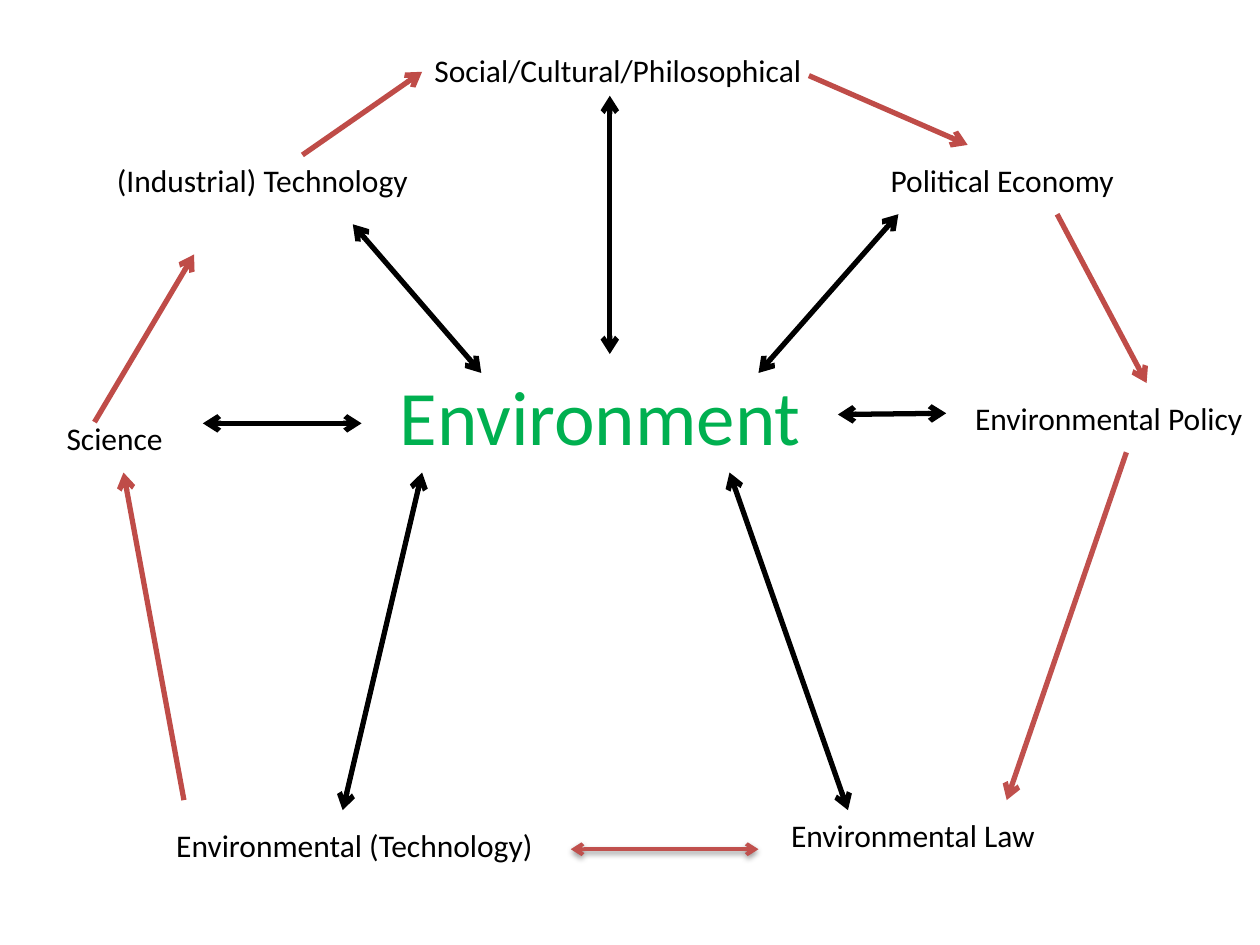
import pptx
import pptx.util
import pptx.dml.color
import pptx.enum.shapes
import pptx.enum.text
import pptx.oxml
import pptx.oxml.ns

Inches, Pt = pptx.util.Inches, pptx.util.Pt

THEME = {
    "font": "Calibri", "title_size": 44, "label_size": 18,
    "title": "00B050", "text": "000000",
    "spoke": "000000", "cycle": "BF4C48", "accent": "C0504D",
    "line": 3, "thin_line": 2.25,
}
TITLE = ("Environment", 2.4, 2.49, 4.73, 1.61)
LABEL_HEIGHT = 0.4
LABELS = [
    ("Political Economy", 6.97, 1.23, 2.13),
    ("Social/Cultural/Philosophical", 3.35, 0.36, 3.47),
    ("(Industrial) Technology", 0.83, 1.23, 2.52),
    ("Science", 0.43, 3.28, 1.1),
    ("Environmental (Technology)", 1.3, 6.51, 3.15),
    ("Environmental Law", 6.18, 6.43, 2.6),
    ("Environmental Policy", 7.64, 3.12, 2.36),
]
SPOKES = [
    (2.72, 6.43, 3.35, 3.75),
    (6.73, 6.43, 5.79, 3.75),
    (1.61, 3.36, 2.87, 3.36),
    (2.8, 1.78, 3.82, 2.96),
    (4.84, 2.81, 4.84, 0.76),
    (6.02, 2.96, 7.13, 1.7),
    (6.65, 3.29, 7.51, 3.28),
]
CYCLE = [
    (1.46, 6.35, 0.98, 3.75),
    (0.75, 3.35, 1.54, 2.02),
    (2.4, 1.23, 3.35, 0.57),
    (6.42, 0.6, 7.68, 1.15),
    (8.39, 1.7, 9.1, 3.04),
]
POLICY_TO_LAW = (8.94, 3.59, 7.99, 6.35)
TECHNOLOGY_AND_LAW = (4.53, 6.74, 6.02, 6.74)
SHADOW = (
    '<a:outerShdw blurRad="40000" dist="20000" dir="5400000" rotWithShape="0">'
    '<a:srgbClr val="000000"><a:alpha val="38000"/></a:srgbClr></a:outerShdw>'
)


def xml(tag, content="", attrs=""):
    ns = pptx.oxml.ns.nsdecls("a")
    return pptx.oxml.parse_xml(f"<a:{tag} {ns} {attrs}>{content}</a:{tag}>")


def rgb(name):
    return pptx.dml.color.RGBColor.from_string(THEME[name])


def write(sp, text, size, color):
    sp.text_frame.word_wrap = True
    p = sp.text_frame.paragraphs[0]
    p.text = text
    p.font.name = THEME["font"]
    p.font.size = Pt(THEME[size])
    p.font.color.rgb = rgb(color)
    return p


def add_title(slide):
    text, *box = TITLE
    sp = slide.shapes.title
    sp.left, sp.top, sp.width, sp.height = map(Inches, box)
    sp.text_frame.vertical_anchor = pptx.enum.text.MSO_ANCHOR.MIDDLE
    p = write(sp, text, "title_size", "title")
    p.alignment = pptx.enum.text.PP_ALIGN.CENTER


def add_label(slide, text, left, top, width):
    box = map(Inches, (left, top, width, LABEL_HEIGHT))
    sp = slide.shapes.add_textbox(*box)
    write(sp, text, "label_size", "text")
    sp.text_frame.auto_size = pptx.enum.text.MSO_AUTO_SIZE.SHAPE_TO_FIT_TEXT


def add_arrow(slide, ends, color, double=False, width="line", shadow=""):
    kind = pptx.enum.shapes.MSO_CONNECTOR.STRAIGHT
    sp = slide.shapes.add_connector(kind, *map(Inches, ends))
    sp.line.color.rgb = rgb(color)
    sp.line.width = Pt(THEME[width])
    ln = sp.line._get_or_add_ln()
    for tag in ("headEnd", "tailEnd") if double else ("tailEnd",):
        ln.append(xml(tag, attrs='type="arrow"'))
    ln.getparent().append(xml("effectLst", shadow))


def main():
    prs = pptx.Presentation()
    prs.slide_width, prs.slide_height = Inches(10), Inches(7.5)
    slide = prs.slides.add_slide(prs.slide_layouts[0])
    subtitle = slide.placeholders[1].element
    subtitle.getparent().remove(subtitle)
    add_title(slide)
    for label in LABELS:
        add_label(slide, *label)
    for ends in SPOKES:
        add_arrow(slide, ends, "spoke", double=True)
    for ends in CYCLE:
        add_arrow(slide, ends, "cycle")
    add_arrow(slide, POLICY_TO_LAW, "accent")
    add_arrow(slide, TECHNOLOGY_AND_LAW, "accent", True, "thin_line", SHADOW)
    prs.save("out.pptx")


if __name__ == "__main__":
    main()
